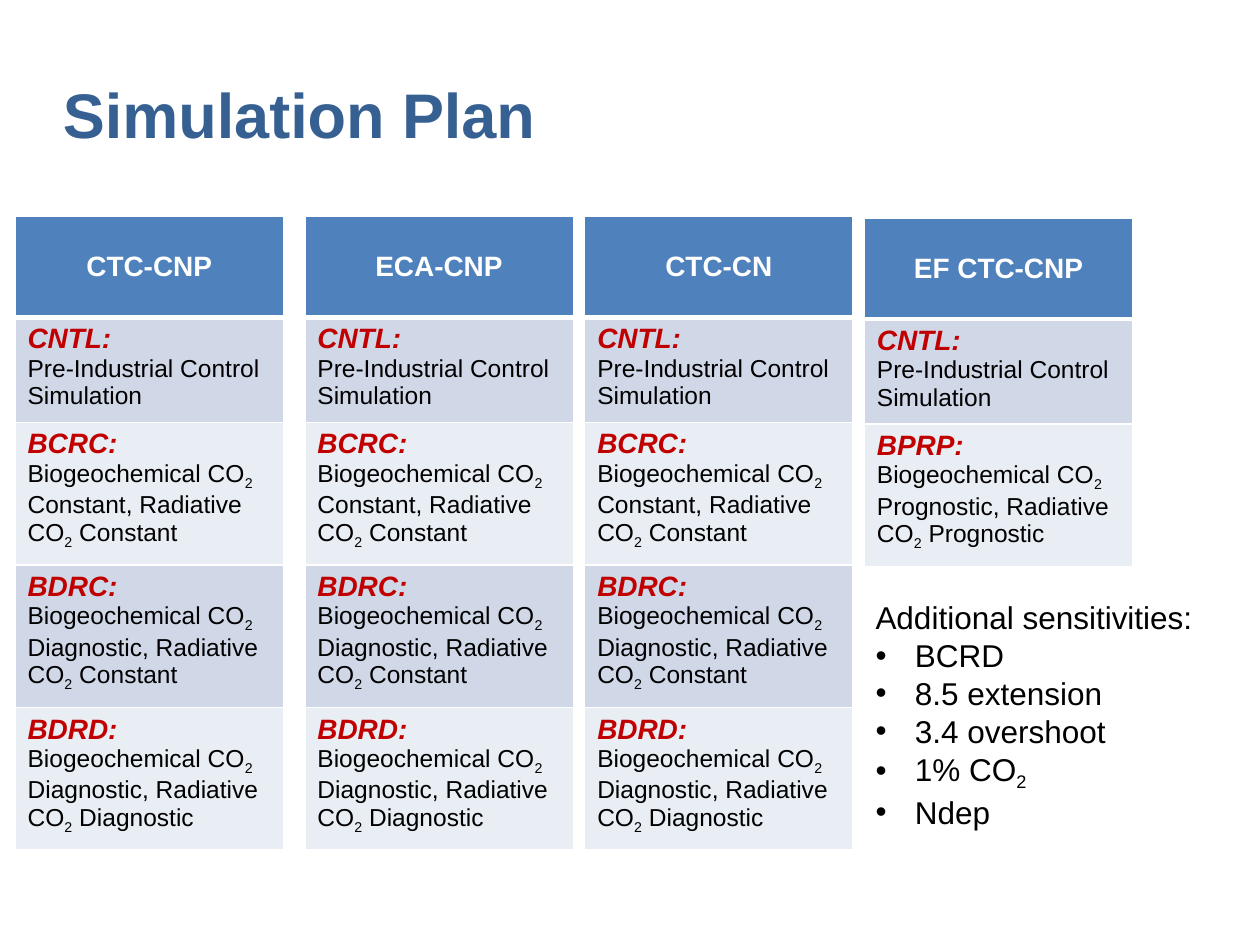
"""Build the Simulation Plan slide with its four experiment tables."""
from lxml.etree import SubElement
from pptx import Presentation
from pptx.dml.color import RGBColor
from pptx.enum.text import MSO_ANCHOR as Anchor, MSO_AUTO_SIZE as AutoSize, PP_ALIGN as Align
from pptx.oxml.ns import qn
from pptx.util import Pt

TITLE_BLUE = RGBColor(0x37, 0x60, 0x92)
HEADER_BLUE = RGBColor(0x4F, 0x81, 0xBD)
BAND_DARK = RGBColor(0xD0, 0xD8, 0xE8)
BAND_LIGHT = RGBColor(0xE9, 0xED, 0xF4)
CODE_RED = RGBColor(0xC0, 0x00, 0x00)
WHITE = RGBColor(0xFF, 0xFF, 0xFF)
BLACK = RGBColor(0x00, 0x00, 0x00)

TITLE_STYLE = {"size": Pt(36), "bold": True, "color": TITLE_BLUE}
HEADER_STYLE = {"size": Pt(16), "bold": True, "color": WHITE}
CODE_STYLE = {"size": Pt(16), "bold": True, "italic": True, "color": CODE_RED}
DETAIL_STYLE = {"size": Pt(14), "bold": False, "color": BLACK}
LIST_STYLE = {"size": Pt(18), "color": BLACK}
NO_MARGINS = dict.fromkeys(("margin_left", "margin_top", "margin_right", "margin_bottom"), 0)

COLUMN_WIDTH = 153.4
HEADER_HEIGHT = 57.6
CONTROL_HEIGHT = 59.4
EXPERIMENT_HEIGHT = 81.4
BULLET_INDENT = 22.5

CONTROL = ("CNTL:", "Pre-Industrial Control Simulation")


def experiment(code, biogeochemical, radiative):
    """Return the code and description of a CO2 experiment, subscripts between underscores."""
    return code, f"Biogeochemical CO_2_ {biogeochemical}, Radiative CO_2_ {radiative}"


COUPLED_SET = [
    CONTROL,
    experiment("BCRC:", "Constant", "Constant"),
    experiment("BDRC:", "Diagnostic", "Constant"),
    experiment("BDRD:", "Diagnostic", "Diagnostic"),
]
EMISSION_SET = [CONTROL, experiment("BPRP:", "Prognostic", "Prognostic")]
PLANS = [
    ("CTC-CNP", 8.6, 123.8, COUPLED_SET),
    ("ECA-CNP", 174.2, 123.8, COUPLED_SET),
    ("CTC-CN", 334.1, 123.8, COUPLED_SET),
    ("EF CTC-CNP", 493.9, 124.6, EMISSION_SET),
]
SENSITIVITIES = ["BCRD", "8.5 extension", "3.4 overshoot", "1% CO_2_", "Ndep"]


def set_values(target, values):
    """Set every named attribute on the target."""
    for name, value in values.items():
        setattr(target, name, value)


def write(paragraph, text, style):
    """Write text in a style, lowering the parts between underscores."""
    for position, part in enumerate(text.split("_")):
        if not part:
            continue
        run = paragraph.add_run()
        run.text = part
        run.font.name = "Arial"
        set_values(run.font, {key: val for key, val in style.items() if key != "color"})
        run.font.color.rgb = style["color"]
        if position % 2:
            run.font._element.set("baseline", "-25000")


def add_bullet(paragraph):
    """Give the paragraph a hanging round bullet."""
    properties = paragraph._p.get_or_add_pPr()
    properties.set("marL", str(Pt(BULLET_INDENT)))
    properties.set("indent", str(-Pt(BULLET_INDENT)))
    SubElement(properties, qn("a:buFont")).set("typeface", "Arial")
    SubElement(properties, qn("a:buChar")).set("char", "•")


def add_frame(slide, box, values):
    """Add a text box and return its wrapped text frame."""
    frame = slide.shapes.add_textbox(*map(Pt, box)).text_frame
    set_values(frame, {"word_wrap": True, **values})
    return frame


def add_title(slide, text):
    """Add the slide title."""
    frame = add_frame(slide, (36, 21.6, 648, 86.4),
                      {"vertical_anchor": Anchor.MIDDLE, **NO_MARGINS})
    write(frame.paragraphs[0], text, TITLE_STYLE)


def add_sensitivities(slide, heading, items):
    """Add the heading with its bulleted list."""
    frame = add_frame(slide, (493.2, 338.4, 226.8, 138.2),
                      {"auto_size": AutoSize.SHAPE_TO_FIT_TEXT})
    write(frame.paragraphs[0], heading, LIST_STYLE)
    for item in items:
        paragraph = frame.add_paragraph()
        add_bullet(paragraph)
        write(paragraph, item, LIST_STYLE)


def fill_cell(cell, color, bottom_width=1):
    """Give the cell white borders and a solid fill."""
    properties = cell._tc.get_or_add_tcPr()
    for side, width in (("L", 1), ("R", 1), ("T", 1), ("B", bottom_width)):
        border = SubElement(properties, qn(f"a:ln{side}"), w=str(Pt(width)))
        solid = SubElement(border, qn("a:solidFill"))
        SubElement(solid, qn("a:srgbClr")).set("val", str(WHITE))
    cell.fill.solid()
    cell.fill.fore_color.rgb = color


def add_plan(slide, name, left, top, experiments):
    """Add one table with a header and a banded row for each experiment."""
    heights = [HEADER_HEIGHT, CONTROL_HEIGHT] + [EXPERIMENT_HEIGHT] * (len(experiments) - 1)
    box = map(Pt, (left, top, COLUMN_WIDTH, sum(heights)))
    table = slide.shapes.add_table(len(heights), 1, *box).table
    for row, height in zip(table.rows, heights):
        row.height = Pt(height)

    header = table.cell(0, 0)
    header.vertical_anchor = Anchor.MIDDLE
    fill_cell(header, HEADER_BLUE, 3)
    label = header.text_frame.paragraphs[0]
    label.alignment = Align.CENTER
    write(label, name, HEADER_STYLE)

    for index, (code, detail) in enumerate(experiments, 1):
        cell = table.cell(index, 0)
        fill_cell(cell, BAND_DARK if index % 2 else BAND_LIGHT, 1)
        if index == 1:
            cell._tc.tcPr.find(qn("a:lnT")).set("w", str(Pt(3)))
        write(cell.text_frame.paragraphs[0], code, CODE_STYLE)
        write(cell.text_frame.add_paragraph(), detail, DETAIL_STYLE)


def main():
    """Build and save the slide."""
    deck = Presentation()
    set_values(deck, {"slide_width": Pt(720), "slide_height": Pt(540)})
    slide = deck.slides.add_slide(deck.slide_layouts[6])
    add_title(slide, "Simulation Plan")
    add_sensitivities(slide, "Additional sensitivities:", SENSITIVITIES)
    for plan in PLANS:
        add_plan(slide, *plan)
    deck.save("out.pptx")


if __name__ == "__main__":
    main()
